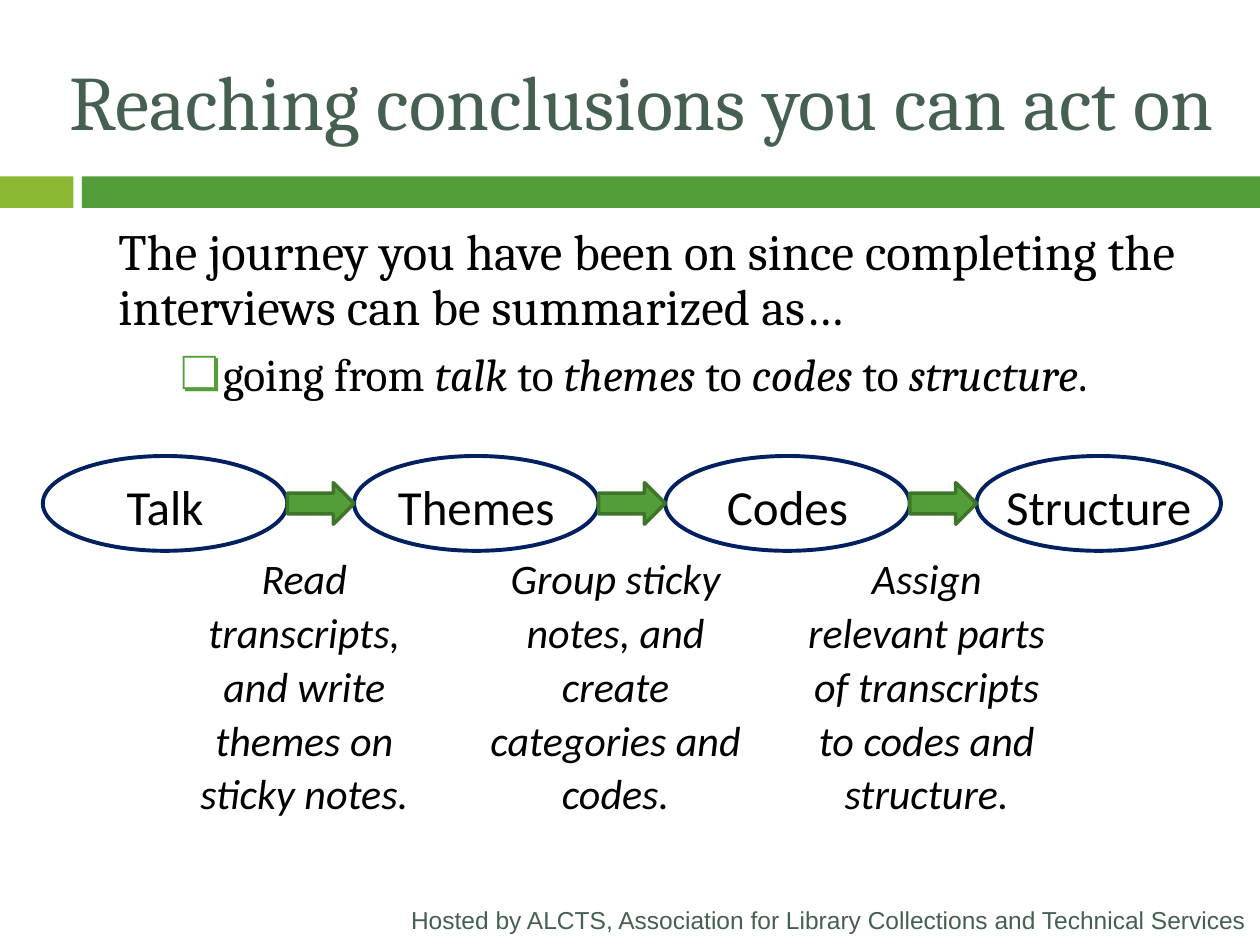
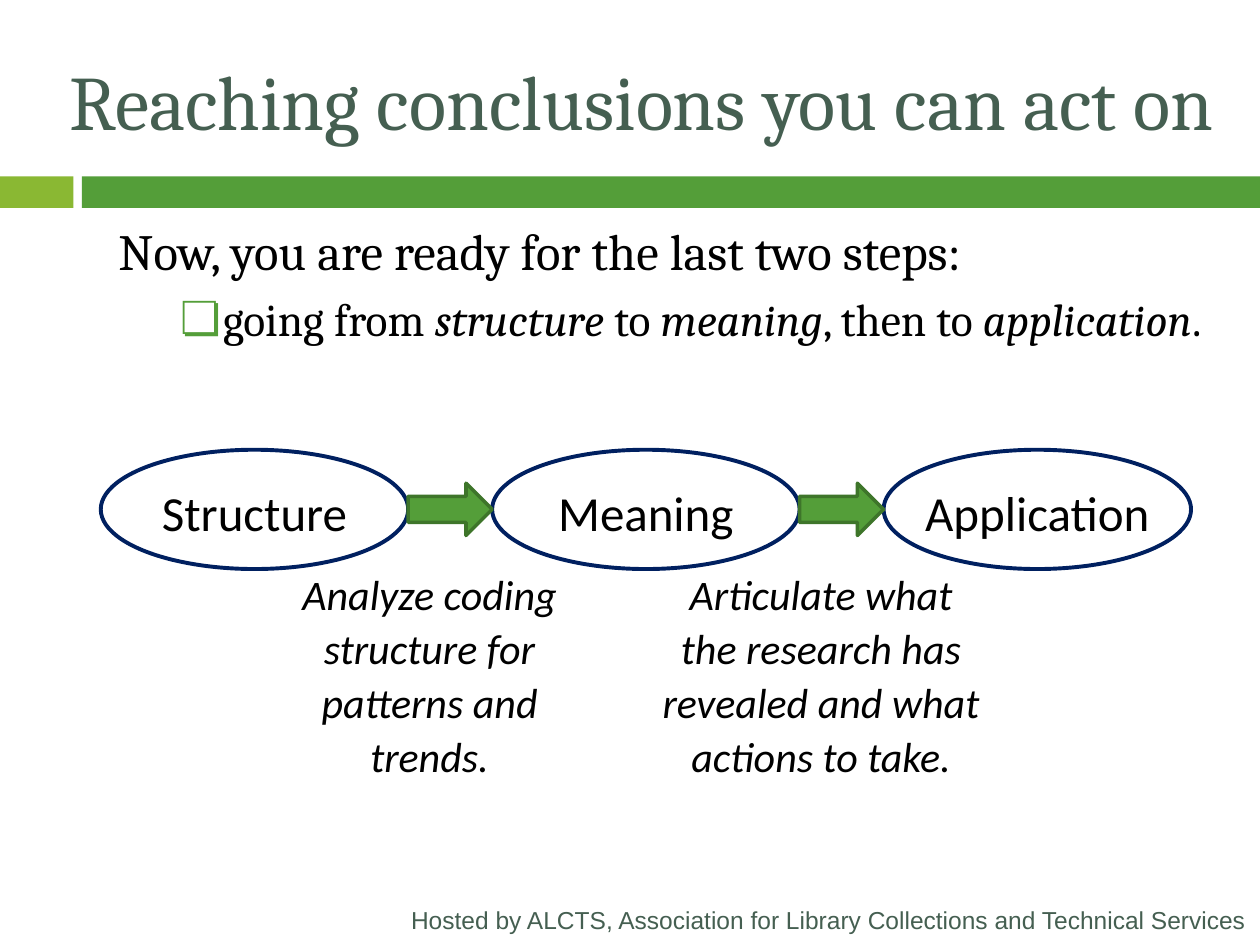
"""Builds two slides on moving from interview talk to application."""
import pptx
import pptx.dml.color
import pptx.enum.shapes
import pptx.enum.text
import pptx.util
from lxml import etree

Pt = pptx.util.Pt
SHAPE = pptx.enum.shapes.MSO_SHAPE
ALIGN = pptx.enum.text.PP_ALIGN
ANCHOR = pptx.enum.text.MSO_ANCHOR
AUTO_SIZE = pptx.enum.text.MSO_AUTO_SIZE

COLOURS = {
    "accent": "8AB833",
    "band": "549E39",
    "arrow_edge": "3E752A",
    "oval_edge": "002060",
    "heading": "455F51",
    "text": "000000",
}
FONTS = {
    "title": {"name": "Cambria", "size": Pt(44), "colour": "heading"},
    "lead": {"name": "Cambria", "size": Pt(29), "colour": "text"},
    "point": {"name": "Cambria", "size": Pt(26), "colour": "text"},
    "label": {"name": "Calibri", "size": Pt(28), "colour": "text"},
    "caption": {"name": "Calibri", "size": Pt(24), "italic": True, "colour": "text"},
    "footer": {"name": "Arial", "size": Pt(14), "colour": "heading"},
}
PARAGRAPHS = {
    "title": {"alignment": ALIGN.LEFT},
    "lead": {"line_spacing": 0.9, "space_before": Pt(0)},
    "point": {"line_spacing": 1.0, "space_before": Pt(5.5)},
    "label": {"alignment": ALIGN.CENTER, "line_spacing": 1.07},
    "caption": {"alignment": ALIGN.CENTER, "line_spacing": 1.07},
    "footer": {"alignment": ALIGN.RIGHT},
}
TITLE = "Reaching conclusions you can act on"
FOOTER = "Hosted by ALCTS, Association for Library Collections and Technical Services"


def colour(name):
    return pptx.dml.color.RGBColor.from_string(COLOURS[name])


def set_all(target, values):
    for name, value in values.items():
        setattr(target, name, value)


class Deck:
    """Holds the style and the current slide."""

    def __init__(self):
        self.deck = pptx.Presentation()
        set_all(self.deck, {"slide_width": Pt(720), "slide_height": Pt(540)})
        self.page = None

    def fill_paragraph(self, paragraph, text, style):
        set_all(paragraph, PARAGRAPHS[style])
        for index, part in enumerate(text.split("*")):
            span = paragraph.add_run()
            span.text = part
            for name, value in FONTS[style].items():
                if name == "colour":
                    span.font.color.rgb = colour(value)
                else:
                    setattr(span.font, name, value)
            if index % 2:
                span.font.italic = True

    def indent(self, paragraph, left, first, bullet=None):
        properties = paragraph._p.get_or_add_pPr()
        properties.set("marL", str(Pt(left)))
        properties.set("indent", str(Pt(first)))
        namespace = "{%s}" % properties.nsmap["a"]
        if bullet:
            tint = etree.SubElement(properties, namespace + "buClr")
            etree.SubElement(tint, namespace + "srgbClr", val=COLOURS["band"])
            etree.SubElement(properties, namespace + "buChar", char=bullet)
        else:
            etree.SubElement(properties, namespace + "buNone")

    def shape(self, kind, left, top, width, height, fill=None, edge=None, weight=0):
        shape = self.page.shapes.add_shape(kind, Pt(left), Pt(top), Pt(width), Pt(height))
        shape.shadow.inherit = False
        if fill:
            shape.fill.solid()
            shape.fill.fore_color.rgb = colour(fill)
        else:
            shape.fill.background()
        if edge:
            shape.line.color.rgb = colour(edge)
            shape.line.width = Pt(weight)
        else:
            shape.line.fill.background()
        return shape

    def text(self, text, style, left, top, width, height, anchor=ANCHOR.TOP):
        box = self.page.shapes.add_textbox(Pt(left), Pt(top), Pt(width), Pt(height))
        set_all(box.text_frame, {"word_wrap": True, "vertical_anchor": anchor})
        self.fill_paragraph(box.text_frame.paragraphs[0], text, style)

    def placeholder(self, index, left, top, width, height, anchor):
        box = self.page.placeholders[index]
        set_all(box, {"left": Pt(left), "top": Pt(top), "width": Pt(width), "height": Pt(height)})
        set_all(box.text_frame, {"word_wrap": True, "auto_size": AUTO_SIZE.NONE,
                                 "vertical_anchor": anchor})
        return box.text_frame

    def add_page(self, lead, point, body_width):
        self.page = self.deck.slides.add_slide(self.deck.slide_layouts[1])
        self.shape(SHAPE.RECTANGLE, 0, 100.8, 42, 18, "accent")
        self.shape(SHAPE.RECTANGLE, 46.8, 100.8, 673.2, 18, "band")
        title = self.placeholder(0, 32.4, 18, 671.5, 77.76, ANCHOR.MIDDLE)
        self.fill_paragraph(title.paragraphs[0], TITLE, "title")
        body = self.placeholder(1, 48.24, 126, body_width, 354.24, ANCHOR.TOP)
        self.indent(body.paragraphs[0], 12.24, 0)
        self.fill_paragraph(body.paragraphs[0], lead, "lead")
        paragraph = body.add_paragraph()
        paragraph.level = 1
        self.indent(paragraph, 72, -24.5, "❏")
        self.fill_paragraph(paragraph, point, "point")
        self.text(FOOTER, "footer", 219.6, 511.2, 499.7, 28.8, ANCHOR.MIDDLE)

    def flow(self, left, top, width, labels, captions):
        height, gap = width * 0.388, width * 0.273
        arrow_height, caption_width = width * 0.17, width * 1.14
        for step, label in enumerate(labels):
            oval = self.shape(SHAPE.OVAL, left + step * (width + gap), top, width, height,
                              edge="oval_edge", weight=2.25)
            set_all(oval.text_frame, {"word_wrap": False, "vertical_anchor": ANCHOR.MIDDLE})
            self.fill_paragraph(oval.text_frame.paragraphs[0], label, "label")
        for step, caption in enumerate(captions):
            start = left + step * (width + gap) + width
            self.shape(SHAPE.RIGHT_ARROW, start, top + (height - arrow_height) / 2,
                       gap, arrow_height, "band", "arrow_edge", 2)
            centre = start + gap / 2 - width * 0.067
            self.text(caption, "caption", centre - caption_width / 2,
                      top + height - width * 0.034, caption_width, width)


def main():
    deck = Deck()
    deck.add_page("The journey you have been on since completing the interviews "
                  "can be summarized as…",
                  "going from *talk* to *themes* to *codes* to *structure*.", 642.24)
    deck.flow(24.5, 260.6, 139.7, ["Talk", "Themes", "Codes", "Structure"],
              ["Read transcripts, and write themes on sticky notes.",
               "Group sticky notes, and create categories and codes.",
               "Assign relevant parts of transcripts to codes and structure."])
    deck.add_page("Now, you are ready for the last two steps:",
                  "going from *structure* to *meaning*, then to *application*.", 655.2)
    deck.flow(57.6, 257, 175.7, ["Structure", "Meaning", "Application"],
              ["Analyze coding structure for patterns and trends.",
               "Articulate what the research has revealed and what actions to take."])
    deck.deck.save("out.pptx")


if __name__ == "__main__":
    main()
